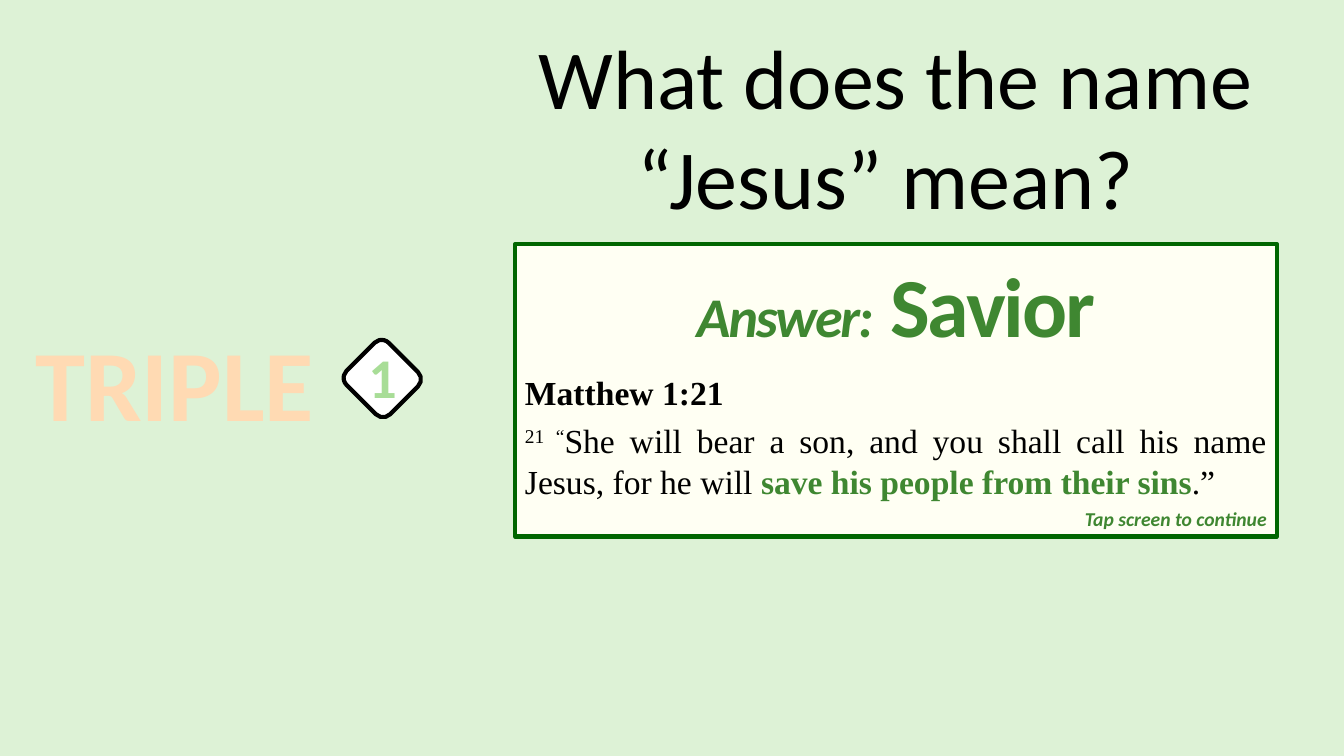
from pptx import Presentation
from pptx.dml.color import RGBColor
from pptx.enum.shapes import MSO_SHAPE as Shape
from pptx.enum.text import PP_ALIGN as Align
from pptx.oxml import parse_xml
from pptx.oxml.ns import nsdecls
from pptx.util import Cm, Pt

BLACK, GREEN, DARK_GREEN = "000000", "3F8731", "006600"
SERIF = "Times New Roman"


def paint(target, color):
    """Give a fill a solid colour."""
    target.solid()
    target.fore_color.rgb = RGBColor.from_string(color)


def add_panel(page, kind, left, top, width, height, fill, line):
    panel = page.shapes.add_shape(kind, Cm(left), Cm(top), Cm(width), Cm(height))
    panel.shadow.inherit = False
    paint(panel.fill, fill)
    paint(panel.line.fill, line)
    panel.line.width = Pt(3)
    return panel


def add_span(para, text, size, color=BLACK, font="Calibri", bold=False,
             italic=False, **attributes):
    """Add a run; attributes go to its a:rPr (spc, baseline)."""
    span = para.add_run()
    span.text = text
    span.font.name = font
    span.font.size = Pt(size)
    span.font.bold = bold
    span.font.italic = italic
    paint(span.font.fill, color)
    for name, value in attributes.items():
        span.font._element.set(name, str(value))
    return span


def add_label(page, left, top, width, height, text, size, align, wrap=True, **style):
    box = page.shapes.add_textbox(Cm(left), Cm(top), Cm(width), Cm(height))
    box.text_frame.word_wrap = wrap
    para = box.text_frame.paragraphs[0]
    para.alignment = align
    return add_span(para, text, size, **style)


def outline_text(span, color, points):
    span.font._element.insert(0, parse_xml(
        f'<a:ln {nsdecls("a")} w="{Pt(points)}"><a:solidFill>'
        f'<a:srgbClr val="{color}"/></a:solidFill></a:ln>'))


def add_answer(page):
    panel = add_panel(page, Shape.RECTANGLE, 12.98, 6.15, 19.2, 7.37,
                      "FFFFF3", DARK_GREEN)
    frame = panel.text_frame
    frame.word_wrap = True
    frame.vertical_anchor = None
    frame._txBody.bodyPr.set("anchor", "t")
    frame.margin_top = Cm(0.74)

    answer = frame.paragraphs[0]
    answer.alignment = Align.CENTER
    answer.line_spacing = 0.8
    answer.space_after = Pt(12.5)
    add_span(answer, "Answer:", 40, GREEN, bold=True, italic=True, spc=-150)
    add_span(answer, " Savior", 60, GREEN, bold=True, spc=-150)

    reference = frame.add_paragraph()
    reference.alignment = Align.LEFT
    reference.space_after = Pt(6)
    add_span(reference, "Matthew 1:21", 24, font=SERIF, bold=True)

    verse = frame.add_paragraph()
    verse.alignment = Align.JUSTIFY
    add_span(verse, "21 “", 24, font=SERIF, baseline=30000)
    add_span(verse, "She will bear a son, and you shall call his name Jesus, "
                    "for he will ", 24, font=SERIF)
    add_span(verse, "save his people from their sins", 24, GREEN, SERIF, bold=True)
    add_span(verse, ".”", 24, font=SERIF)


def add_score(page):
    add_label(page, 0.64, 7.96, 7.6, 3.1, "TRIPLE", 72, Align.LEFT,
              color="FFDAB3", bold=True)
    diamond = add_panel(page, Shape.ROUNDED_RECTANGLE, 8.86, 8.79, 1.55, 1.5,
                        "FFFFFF", BLACK)
    diamond.rotation = 45
    number = add_label(page, 9.02, 8.51, 1.24, 1.96, "1", 40, Align.CENTER,
                       wrap=False, color="A8DD97", bold=True)
    outline_text(number, BLACK, 2.25)


def main():
    deck = Presentation()
    deck.slide_width, deck.slide_height = Cm(33.87), Cm(19.05)
    page = deck.slides.add_slide(deck.slide_layouts[6])
    paint(page.background.fill, "DDF2D6")
    add_answer(page)
    add_label(page, 26.82, 12.65, 5.36, 0.86, "Tap screen to continue", 14,
              Align.RIGHT, color=GREEN, bold=True, italic=True)
    add_score(page)
    add_label(page, 11.91, 0.51, 21.31, 5.38, "What does the name “Jesus” mean? ",
              60, Align.CENTER)
    deck.save("out.pptx")


if __name__ == "__main__":
    main()
